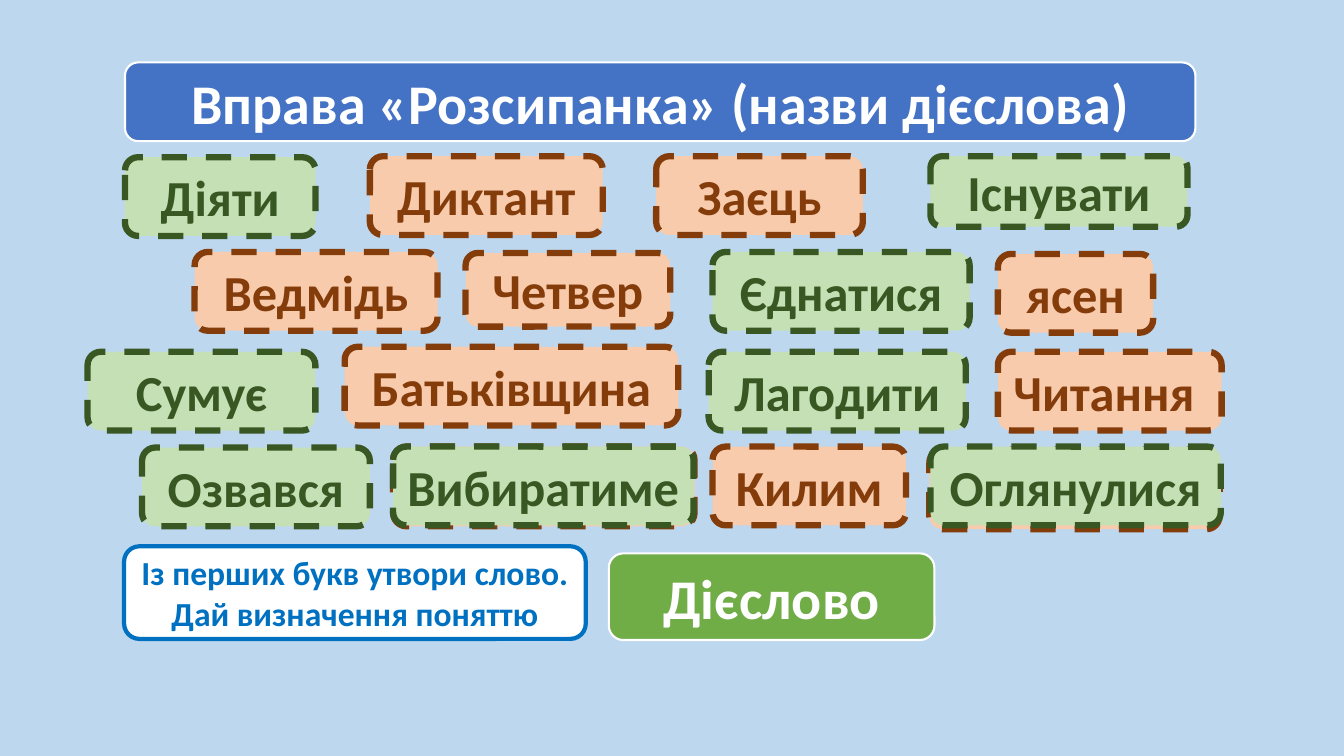
from pptx import Presentation
from pptx.dml.color import RGBColor
from pptx.enum.dml import MSO_LINE
from pptx.enum.shapes import MSO_SHAPE
from pptx.enum.text import MSO_ANCHOR, PP_ALIGN
from pptx.util import Pt

COLORS = {
    "sky": "BDD7EE", "blue": "4472C4", "white": "FFFFFF", "azure": "0070C0",
    "leaf": "70AD47", "mint": "C5E0B4", "moss": "385723",
    "peach": "F8CBAD", "rust": "843C0B",
}
VERB = ("mint", "moss")
OTHER = ("peach", "rust")
HIGH = 56.2


def color(name):
    return RGBColor.from_string(COLORS[name])


def add_box(place, fill, edge, weight, text="", size=36, ink=None):
    """Add a rounded box; the text takes the edge color unless ink is given."""
    box = slide.shapes.add_shape(MSO_SHAPE.ROUNDED_RECTANGLE, *map(Pt, place))
    box.shadow.inherit = False
    box.fill.solid()
    box.fill.fore_color.rgb = color(fill)
    box.line.color.rgb = color(edge)
    box.line.width = Pt(weight)
    if text:
        frame = box.text_frame
        frame.word_wrap = True
        frame.vertical_anchor = MSO_ANCHOR.MIDDLE
        para = frame.paragraphs[0]
        para.alignment = PP_ALIGN.CENTER
        run = para.add_run()
        run.text = text
        run.font.name = "Calibri"
        run.font.size = Pt(size)
        run.font.bold = True
        run.font.color.rgb = color(ink or edge)
    return box


deck = Presentation()
deck.slide_width, deck.slide_height = Pt(960), Pt(540)
slide = deck.slides.add_slide(deck.slide_layouts[6])
slide.background.fill.solid()
slide.background.fill.fore_color.rgb = color("sky")

add_box((89.3, 44.6, 764.6, 56.2), "blue", "white", 1.5,
        "Вправа «Розсипанка» (назви дієслова)", 40, "white")

# Word cards: text, left, top, width, height, kind
cards = [
    ("Діяти", 89.3, 112.3, 136.1, HIGH, VERB),
    ("Диктант", 264.2, 111.6, 166.3, HIGH, OTHER),
    ("Заєць", 468.7, 111.6, 147.6, HIGH, OTHER),
    ("Існувати", 664.6, 111.6, 183.6, 50.4, VERB),
    ("Ведмідь", 139, 180, 173.5, HIGH, OTHER),
    ("Четвер", 332.6, 180.7, 146.2, 52.6, OTHER),
    ("Єднатися", 509, 180, 183.6, HIGH, VERB),
    ("ясен", 712.8, 181.4, 110.9, HIGH, OTHER),
    ("Сумує", 62.6, 251.3, 162.7, HIGH, VERB),
    ("Батьківщина", 246.2, 247.7, 238.3, HIGH, OTHER),
    ("Лагодити", 506.2, 251.3, 183.6, HIGH, VERB),
    ("Читання ", 712.8, 251.3, 159.8, HIGH, OTHER),
    ("Озвався", 101.5, 319.7, 162.7, HIGH, VERB),
    # Peach cards that peek out from under the next green ones
    ("", 280.8, 319, 215.3, 56.9, OTHER),
    ("Вибиратиме", 280.8, 319, 214.6, HIGH, VERB),
    ("Килим", 509, 319, 138.2, HIGH, OTHER),
    ("", 663.8, 321.1, 207.4, 56.9, OTHER),
    ("Оглянулися", 664.6, 319, 207.4, HIGH, VERB),
]
for word, left, top, width, height, (fill, edge) in cards:
    card = add_box((left, top, width, height), fill, edge, 4.5, word)
    card.line.dash_style = MSO_LINE.DASH

add_box((88.6, 390.2, 329.8, 66.2), "white", "azure", 3,
        "Із перших букв утвори слово. Дай визначення поняттю", 24)
add_box((434.9, 395.3, 232.6, 61.9), "leaf", "white", 1.5,
        "Дієслово", 40, "white")

deck.save("out.pptx")
